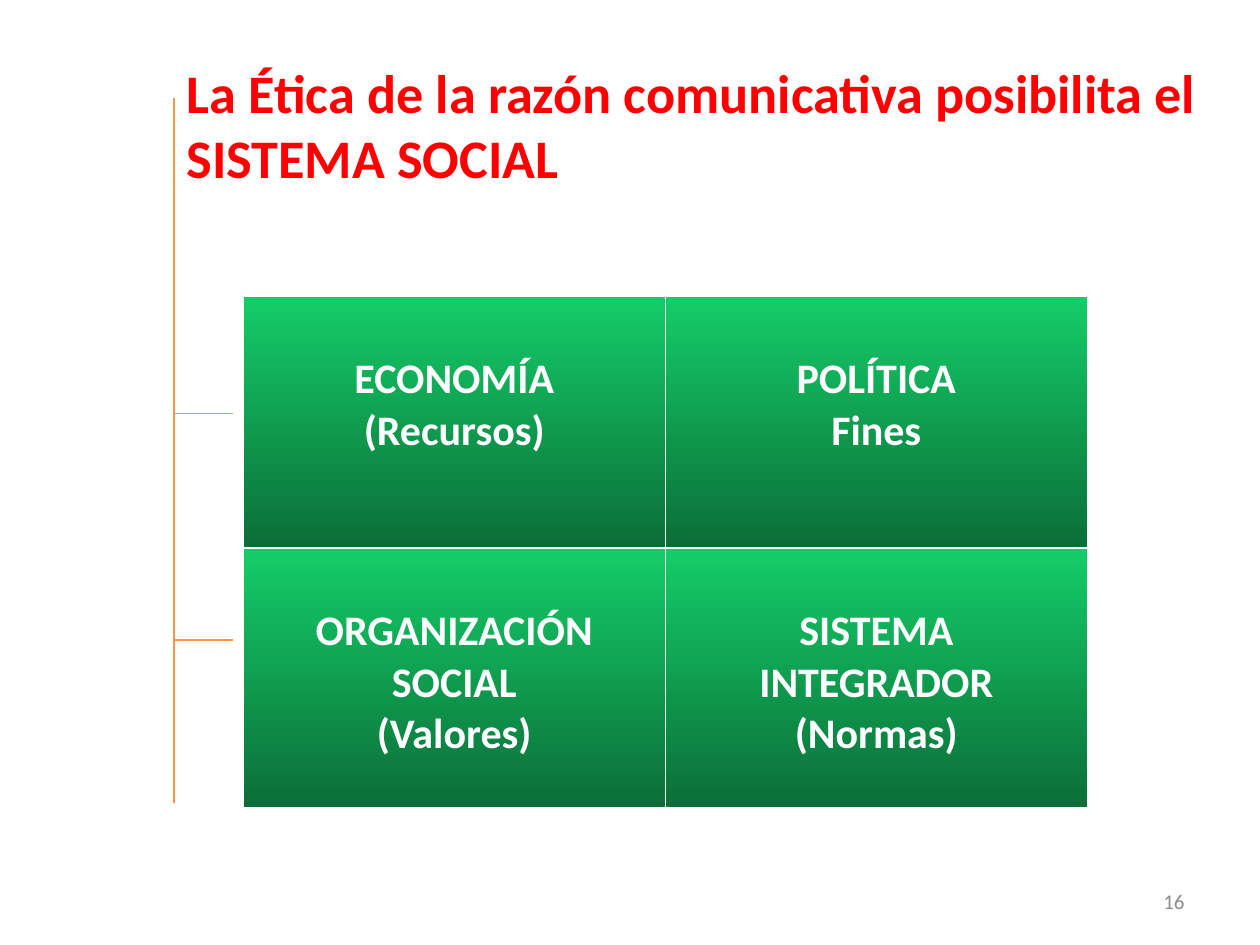
from pptx import Presentation
from pptx.dml.color import RGBColor
from pptx.enum.shapes import MSO_CONNECTOR
from pptx.enum.text import MSO_ANCHOR, MSO_AUTO_SIZE, PP_ALIGN
from pptx.oxml.ns import qn
from pptx.util import Inches, Pt

RED = RGBColor(0xFF, 0x00, 0x00)
WHITE = RGBColor(0xFF, 0xFF, 0xFF)
GREEN = RGBColor(0x14, 0xCD, 0x68)
DARK_GREEN = RGBColor(0x0B, 0x6E, 0x38)
ORANGE = RGBColor(0xF7, 0x96, 0x46)
GRAY = RGBColor(0x8C, 0x8C, 0x8C)


class SlideBuilder:
    """Holds the font and the slide being built."""

    font = "Calibri"

    def __init__(self, slide):
        self.slide = slide

    def format(self, paragraph, size, color, align, bold=False):
        paragraph.alignment = align
        for run in paragraph.runs:
            run.font.name = self.font
            run.font.size = Pt(size)
            run.font.bold = bold
            run.font.color.rgb = color

    def title(self, text, left, top, width, height):
        title = self.slide.shapes.title
        title.left, title.top = Inches(left), Inches(top)
        title.width, title.height = Inches(width), Inches(height)
        frame = title.text_frame
        frame.text = text
        frame.auto_size = MSO_AUTO_SIZE.NONE
        frame.vertical_anchor = MSO_ANCHOR.MIDDLE
        self.format(frame.paragraphs[0], 31, RED, PP_ALIGN.LEFT, bold=True)

    def line(self, x1, y1, x2, y2):
        line = self.slide.shapes.add_connector(
            MSO_CONNECTOR.STRAIGHT, Inches(x1), Inches(y1), Inches(x2), Inches(y2))
        line.line.color.rgb = ORANGE
        line.line.width = Pt(0.75)
        properties = line._element.spPr
        properties.append(properties.makeelement(qn("a:effectLst"), {}))

    def cell(self, cell, text):
        cell.fill.gradient()
        cell.fill.gradient_angle = 270  # light at the top
        for stop, color, position in zip(
                cell.fill.gradient_stops, (GREEN, DARK_GREEN), (0, 1)):
            stop.color.rgb = color
            stop.position = position
        cell.margin_top = Inches(0.46)
        cell.text_frame.text = text
        for paragraph in cell.text_frame.paragraphs:
            self.format(paragraph, 24, WHITE, PP_ALIGN.CENTER, bold=True)

    def table(self, rows, left, top, width, heights):
        table = self.slide.shapes.add_table(
            len(rows), len(rows[0]), Inches(left), Inches(top),
            Inches(width), Inches(sum(heights))).table
        for row, height, texts in zip(table.rows, heights, rows):
            row.height = Inches(height)
            for cell, text in zip(row.cells, texts):
                self.cell(cell, text)

    def page_number(self, text, left, top, width, height):
        box = self.slide.shapes.add_textbox(
            Inches(left), Inches(top), Inches(width), Inches(height))
        frame = box.text_frame
        frame.word_wrap = True
        frame.vertical_anchor = MSO_ANCHOR.MIDDLE
        frame.text = text
        self.format(frame.paragraphs[0], 12, GRAY, PP_ALIGN.RIGHT)


def main():
    presentation = Presentation()
    presentation.slide_width, presentation.slide_height = Inches(10), Inches(7.5)
    title_only = presentation.slide_layouts[5]
    builder = SlideBuilder(presentation.slides.add_slide(title_only))

    # Title
    builder.title("La Ética de la razón comunicativa posibilita el SISTEMA SOCIAL",
                  1.38, 0.36, 8.27, 1.25)

    # The four parts of the social system
    social_system = [
        ["ECONOMÍA\n(Recursos)", "POLÍTICA\nFines"],
        ["ORGANIZACIÓN SOCIAL\n(Valores)", "SISTEMA INTEGRADOR\n(Normas)"],
    ]
    builder.table(social_system, 1.93, 2.35, 6.7, heights=(2, 2.06))

    # Bracket: trunk and one branch per row
    trunk_x, branch_end = 1.38, 1.85
    builder.line(trunk_x, 0.78, trunk_x, 6.37)
    for branch_y in (3.28, 5.08):
        builder.line(trunk_x, branch_y, branch_end, branch_y)

    # Page number
    builder.page_number("16", 7.17, 6.95, 2.33, 0.4)

    presentation.save("out.pptx")


if __name__ == "__main__":
    main()
